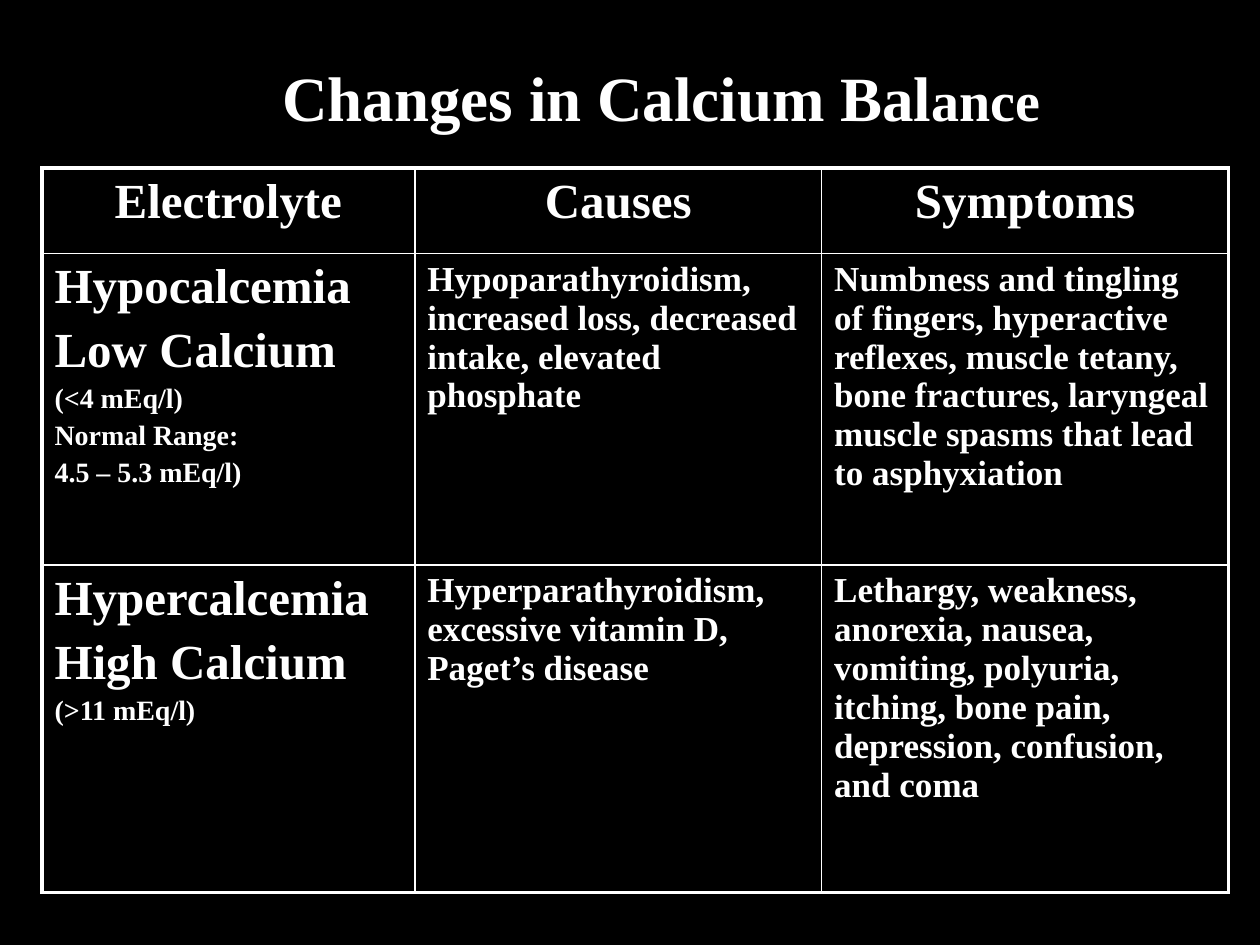
from lxml.etree import SubElement
from pptx import Presentation
from pptx.dml.color import RGBColor
from pptx.enum.text import MSO_AUTO_SIZE, PP_ALIGN
from pptx.oxml.ns import qn
from pptx.util import Pt

HEADINGS = ["Electrolyte", "Causes", "Symptoms"]
CONDITIONS = [
    (["Hypocalcemia", "Low Calcium"],
     ["(<4 mEq/l)", "Normal Range:", "4.5 – 5.3 mEq/l)"],
     "Hypoparathyroidism, increased loss, decreased intake, elevated phosphate",
     "Numbness and tingling of fingers, hyperactive reflexes, muscle tetany, "
     "bone fractures, laryngeal muscle spasms that lead to asphyxiation"),
    (["Hypercalcemia", "High Calcium"],
     ["(>11 mEq/l)"],
     "Hyperparathyroidism, excessive vitamin D, Paget’s disease",
     "Lethargy, weakness, anorexia, nausea, vomiting, polyuria, itching, "
     "bone pain, depression, confusion, and coma"),
]


def color(hex_code):
    return RGBColor.from_string(hex_code)


class SlideBuilder:
    font = "Times New Roman"
    ink = "FFFFFF"
    paper = "000000"
    outer_line, inner_line = 2.25, 1

    def __init__(self, slide):
        self.slide = slide
        fill = slide.background.fill
        fill.solid()
        fill.fore_color.rgb = color(self.paper)

    def add_run(self, paragraph, text, size):
        run = paragraph.add_run()
        run.text = text
        run.font.name = self.font
        run.font.size = Pt(size)
        run.font.bold = True
        run.font.color.rgb = color(self.ink)

    def add_title(self, left, top, width, height, runs):
        box = self.slide.shapes.add_textbox(Pt(left), Pt(top), Pt(width), Pt(height))
        frame = box.text_frame
        frame.word_wrap = True
        frame.auto_size = MSO_AUTO_SIZE.SHAPE_TO_FIT_TEXT
        heading = frame.paragraphs[0]
        heading.alignment = PP_ALIGN.CENTER
        for text, size in runs:
            self.add_run(heading, text, size)

    def fill_cell(self, cell, lines, align):
        frame = cell.text_frame
        for index, (text, size) in enumerate(lines):
            paragraph = frame.add_paragraph() if index else frame.paragraphs[0]
            paragraph.alignment = align
            # Space before is 20 % of the line
            properties = paragraph._p.get_or_add_pPr()
            before = SubElement(properties, qn("a:spcBef"))
            SubElement(before, qn("a:spcPct"), val="20000")
            self.add_run(paragraph, text, size)

    def set_borders(self, cell, outer_sides):
        properties = cell._tc.get_or_add_tcPr()
        for side in "LRTB":
            width = self.outer_line if side in outer_sides else self.inner_line
            line = SubElement(properties, qn(f"a:ln{side}"), w=str(Pt(width)))
            fill = SubElement(line, qn("a:solidFill"))
            SubElement(fill, qn("a:srgbClr"), val=self.ink)
        cell.fill.background()

    def add_table(self, left, top, widths, heights, rows):
        table = self.slide.shapes.add_table(
            len(heights), len(widths), Pt(left), Pt(top),
            Pt(sum(widths)), Pt(sum(heights))).table
        table.horz_banding = table.first_row = False
        for column, width in zip(table.columns, widths):
            column.width = Pt(width)
        for row, height in zip(table.rows, heights):
            row.height = Pt(height)
        last_row, last_column = len(heights) - 1, len(widths) - 1
        for r, row in enumerate(rows):
            for c, lines in enumerate(row):
                cell = table.cell(r, c)
                align = PP_ALIGN.LEFT if r else PP_ALIGN.CENTER
                self.fill_cell(cell, lines, align)
                edges = {"L": c == 0, "R": c == last_column,
                         "T": r == 0, "B": r == last_row}
                self.set_borders(cell, [side for side in edges if edges[side]])


def main():
    deck = Presentation()
    deck.slide_width, deck.slide_height = Pt(720), Pt(540)
    builder = SlideBuilder(deck.slides.add_slide(deck.slide_layouts[6]))

    # Title
    builder.add_title(84, 30, 588, 51, [("Changes in Calcium Bal", 36), ("ance", 32)])

    # Table: heading row, then one row for each condition
    rows = [[[(heading, 28)] for heading in HEADINGS]]
    for names, levels, causes, symptoms in CONDITIONS:
        electrolyte = [(name, 28) for name in names] + [(level, 16) for level in levels]
        rows.append([electrolyte, [(causes, 20)], [(symptoms, 20)]])
    builder.add_table(24, 96, [213, 232.5, 232.5], [49, 178, 187], rows)

    deck.save("out.pptx")


if __name__ == "__main__":
    main()
